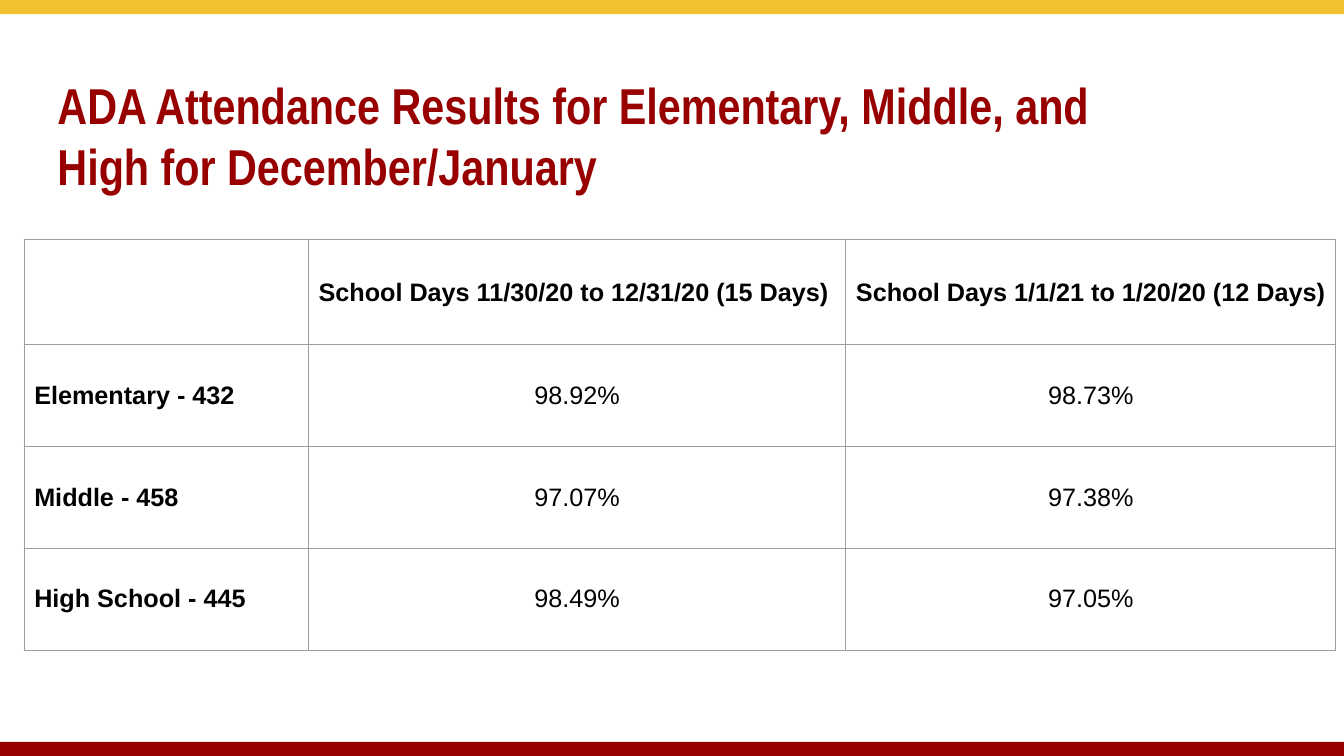
from pptx import Presentation
from pptx.dml.color import RGBColor
from pptx.enum.shapes import MSO_SHAPE
from pptx.enum.text import MSO_ANCHOR, MSO_AUTO_SIZE, PP_ALIGN
from pptx.oxml.ns import qn
from pptx.util import Inches, Pt
from lxml.etree import SubElement

GOLD = "F1C131"
CRIMSON = "980000"
BLACK = "000000"
WHITE = "FFFFFF"
GREY = "9E9E9E"

TITLE = "ADA Attendance Results for Elementary, Middle, and High for December/January"
ROWS = [
    ["", "School Days 11/30/20 to 12/31/20 (15 Days)", "School Days 1/1/21 to 1/20/20 (12 Days)"],
    ["Elementary - 432", "98.92%", "98.73%"],
    ["Middle - 458", "97.07%", "97.38%"],
    ["High School - 445", "98.49%", "97.05%"],
]
COLUMN_WIDTHS = [2.82, 5.33, 4.86]
ROW_HEIGHTS = [1.04, 1.01, 1.01, 1.01]


def color(value):
    return RGBColor.from_string(value)


def add_span(para, text, font, size, fill, bold):
    span = para.add_run()
    span.text = text
    span.font.name = font
    span.font.size = Pt(size)
    span.font.bold = bold
    span.font.color.rgb = color(fill)


def add_bar(page, left, top, width, height, fill):
    bar = page.shapes.add_shape(
        MSO_SHAPE.RECTANGLE, Inches(left), Inches(top), Inches(width), Inches(height)
    )
    bar.shadow.inherit = False
    bar.fill.solid()
    bar.fill.fore_color.rgb = color(fill)
    bar.line.fill.background()


def set_title(page, left, top, width, height):
    title = page.shapes.title
    title.left, title.top = Inches(left), Inches(top)
    title.width, title.height = Inches(width), Inches(height)
    box = title.text_frame
    box.word_wrap = True
    box.auto_size = MSO_AUTO_SIZE.NONE
    box.vertical_anchor = MSO_ANCHOR.TOP
    box.margin_left = box.margin_right = box.margin_bottom = 0
    box.margin_top = Inches(0.01)
    para = box.paragraphs[0]
    para.alignment = PP_ALIGN.LEFT
    add_span(para, TITLE, "Arial Narrow", 36, CRIMSON, True)


def set_borders(cell):
    properties = cell._tc.get_or_add_tcPr()
    for position, side in enumerate(("a:lnL", "a:lnR", "a:lnT", "a:lnB")):
        border = SubElement(properties, qn(side), w=str(Pt(0.75)))
        properties.remove(border)
        properties.insert(position, border)
        fill = SubElement(border, qn("a:solidFill"))
        SubElement(fill, qn("a:srgbClr"), val=GREY)


def fill_cell(cell, text, is_label):
    cell.fill.solid()
    cell.fill.fore_color.rgb = color(WHITE)
    set_borders(cell)
    cell.vertical_anchor = MSO_ANCHOR.MIDDLE
    cell.margin_left = cell.margin_right = Inches(0.1)
    cell.margin_top = cell.margin_bottom = Inches(0.1)
    if text:
        para = cell.text_frame.paragraphs[0]
        para.alignment = PP_ALIGN.LEFT if is_label else PP_ALIGN.CENTER
        add_span(para, text, "Arial", 18, BLACK, is_label)


def add_attendance_table(page, left, top):
    frame = page.shapes.add_table(
        len(ROWS), len(COLUMN_WIDTHS), Inches(left), Inches(top),
        Inches(sum(COLUMN_WIDTHS)), Inches(sum(ROW_HEIGHTS)),
    )
    table = frame.table
    table.first_row = False
    table.horz_banding = False
    for column, width in zip(table.columns, COLUMN_WIDTHS):
        column.width = Inches(width)
    for row, height in zip(table.rows, ROW_HEIGHTS):
        row.height = Inches(height)
    for row_index, texts in enumerate(ROWS):
        for column_index, text in enumerate(texts):
            is_label = row_index == 0 or column_index == 0
            fill_cell(table.cell(row_index, column_index), text, is_label)


def main():
    deck = Presentation()
    deck.slide_width = Inches(13.33)
    deck.slide_height = Inches(7.5)
    page = deck.slides.add_slide(deck.slide_layouts[5])
    add_bar(page, 0, 0, 13.33, 0.14, GOLD)
    add_bar(page, 0, 7.36, 13.33, 0.14, CRIMSON)
    set_title(page, 0.57, 0.73, 11.18, 1.29)
    add_attendance_table(page, 0.24, 2.38)
    deck.save("out.pptx")


if __name__ == "__main__":
    main()
